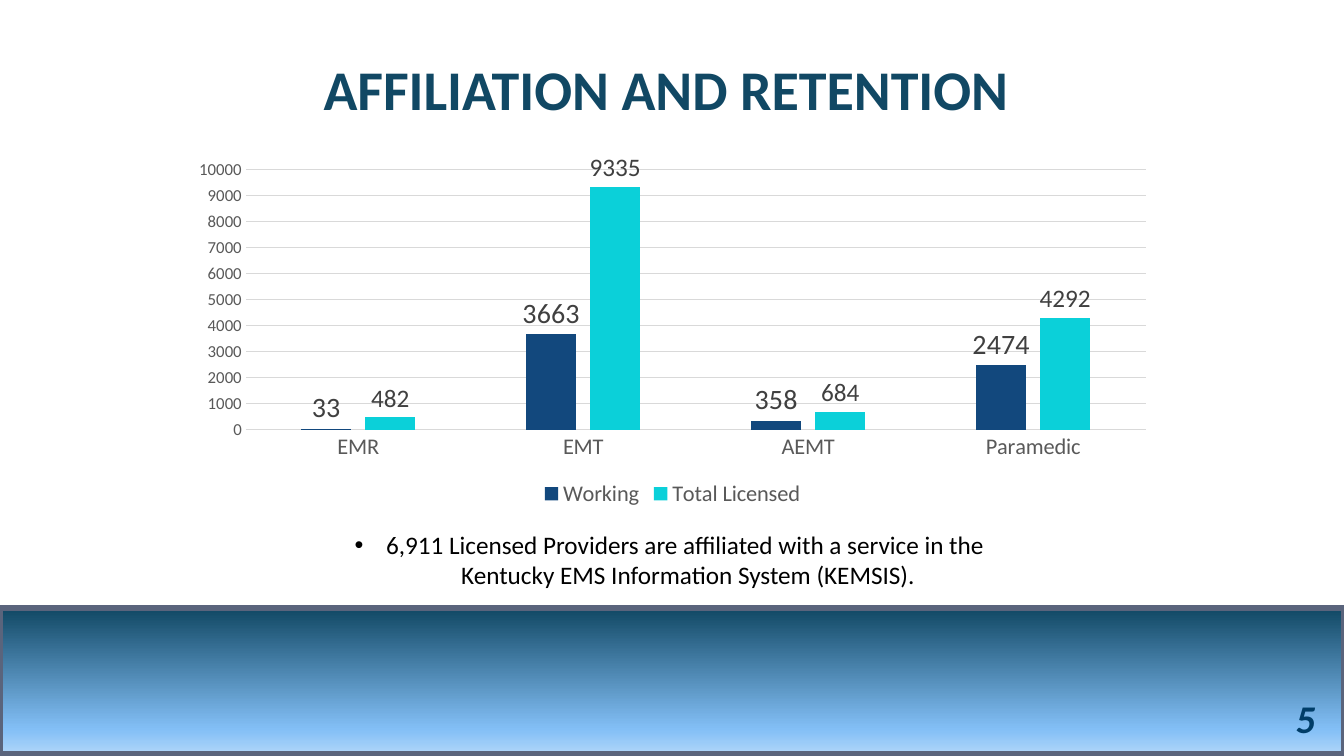
from dataclasses import dataclass

from lxml.etree import SubElement
from pptx import Presentation
from pptx.chart.data import CategoryChartData
from pptx.dml.color import RGBColor
from pptx.enum.chart import XL_CHART_TYPE, XL_LABEL_POSITION, XL_LEGEND_POSITION, XL_TICK_MARK
from pptx.enum.shapes import MSO_SHAPE
from pptx.enum.text import MSO_ANCHOR, MSO_AUTO_SIZE, PP_ALIGN
from pptx.oxml.ns import qn
from pptx.util import Pt


@dataclass(frozen=True)
class Theme:
    font: str = "Calibri"
    title: str = "114864"
    text: str = "000000"
    number: str = "003D68"
    axis: str = "595959"
    label: str = "404040"
    grid: str = "D9D9D9"
    band_line: str = "5A647C"
    band_stops: tuple = ((0, "114864"), (83, "83BFF6"), (99, "ACD4F9"), (100, "83BFF6"))
    title_size: int = 40
    body_size: int = 18
    number_size: int = 28
    category_size: int = 16
    value_size: int = 12


# Content
TITLE = "AFFILIATION AND RETENTION "
BULLET_LINES = [
    "6,911 Licensed Providers are affiliated with a service in the ",
    "Kentucky EMS Information System (KEMSIS).",
]
PAGE_NUMBER = "5"
LEVELS = ["EMR", "EMT", "AEMT", "Paramedic"]
SERIES = [  # name, values, colour, label size
    ("Working", (33, 3663, 358, 2474), "12487D", 20),
    ("Total Licensed", (482, 9335, 684, 4292), "0BD0D9", 18),
]

# Layout in points: left, top, width, height
PAGE_SIZE = (960, 540)
BAND = (0, 434.2, 960, 104.4)
CHART = (128.2, 108.7, 704.2, 257)
BULLET = (84.2, 374.4, 792, 51.1)
TITLE_AREA = (66.2, 13.7, 828, 104.4)
NUMBER = (733, 498.2, 213.8, 28.8)
HANGING = 22.5

theme = Theme()


def color(value):
    return RGBColor.from_string(value)


def points(area):
    return [Pt(length) for length in area]


def place(box, area):
    box.left, box.top, box.width, box.height = points(area)


def style(font, size, value, bold=False, italic=False):
    font.name, font.size = theme.font, Pt(size)
    font.bold, font.italic = bold, italic
    font.color.rgb = color(value)


def write(box, lines, size, value, align, anchor, bold=False, italic=False):
    frame = box.text_frame
    frame.word_wrap = True
    frame.auto_size = MSO_AUTO_SIZE.NONE
    frame.vertical_anchor = anchor
    para = frame.paragraphs[0]
    para.alignment = align
    para.space_before = Pt(0)
    for index, line in enumerate(lines):
        if index:
            para.add_line_break()
        span = para.add_run()
        span.text = line
        style(span.font, size, value, bold, italic)
    return para


deck = Presentation()
deck.slide_width, deck.slide_height = points(PAGE_SIZE)
page = deck.slides.add_slide(deck.slide_layouts[1])

# Footer band
band = page.shapes.add_shape(MSO_SHAPE.RECTANGLE, *points(BAND))
band.shadow.inherit = False
band.line.color.rgb = color(theme.band_line)
band.line.width = Pt(4.33)
band.fill.gradient()
band.fill.gradient_angle = 270
stops = band.fill.gradient_stops[0]._gs.getparent()
for stop in list(stops):
    stops.remove(stop)
for percent, value in theme.band_stops:
    stop = SubElement(stops, qn("a:gs"), pos=str(percent * 1000))
    SubElement(stop, qn("a:srgbClr"), val=value)

# Chart
data = CategoryChartData()
data.categories = LEVELS
for name, values, _, _ in SERIES:
    data.add_series(name, values)
chart = page.shapes.add_chart(XL_CHART_TYPE.COLUMN_CLUSTERED, *points(CHART), data).chart
chart.has_title = False
style(chart.font, 10, theme.text)
chart.has_legend = True
chart.legend.position = XL_LEGEND_POSITION.BOTTOM
chart.legend.include_in_layout = False
style(chart.legend.font, theme.category_size, theme.axis)

plot = chart.plots[0]
plot.gap_width, plot.overlap = 219, -27
plot.vary_by_categories = False
for series, (_, _, value, label_size) in zip(plot.series, SERIES):
    series.format.fill.solid()
    series.format.fill.fore_color.rgb = color(value)
    labels = series.data_labels
    labels.show_value = True
    labels.position = XL_LABEL_POSITION.OUTSIDE_END
    style(labels.font, label_size, theme.label)

# Axes
for axis, size in ((chart.category_axis, theme.category_size), (chart.value_axis, theme.value_size)):
    axis.major_tick_mark = axis.minor_tick_mark = XL_TICK_MARK.NONE
    style(axis.tick_labels.font, size, theme.axis)
chart.value_axis.minimum_scale, chart.value_axis.maximum_scale = 0, 10000
chart.value_axis.major_unit = 1000
chart.value_axis.format.line.fill.background()
for line in (chart.category_axis.format.line, chart.value_axis.major_gridlines.format.line):
    line.color.rgb = color(theme.grid)
    line.width = Pt(0.75)

# Title
title = page.shapes.title
place(title, TITLE_AREA)
heading = write(title, [TITLE], theme.title_size, theme.title, PP_ALIGN.CENTER, MSO_ANCHOR.MIDDLE, bold=True)
heading.line_spacing = 0.9

# Bullet
body = page.placeholders[1]
place(body, BULLET)
bullet = write(body, BULLET_LINES, theme.body_size, theme.text, PP_ALIGN.CENTER, MSO_ANCHOR.TOP)
properties = bullet._p.get_or_add_pPr()
properties.set("marL", str(Pt(HANGING)))
properties.set("indent", str(-Pt(HANGING)))
SubElement(properties, qn("a:buFont"), typeface="Arial")
SubElement(properties, qn("a:buChar"), char="•")

# Page number
number = page.shapes.add_textbox(*points(NUMBER))
write(number, [PAGE_NUMBER], theme.number_size, theme.number, PP_ALIGN.RIGHT, MSO_ANCHOR.MIDDLE, bold=True, italic=True)

deck.save("out.pptx")
